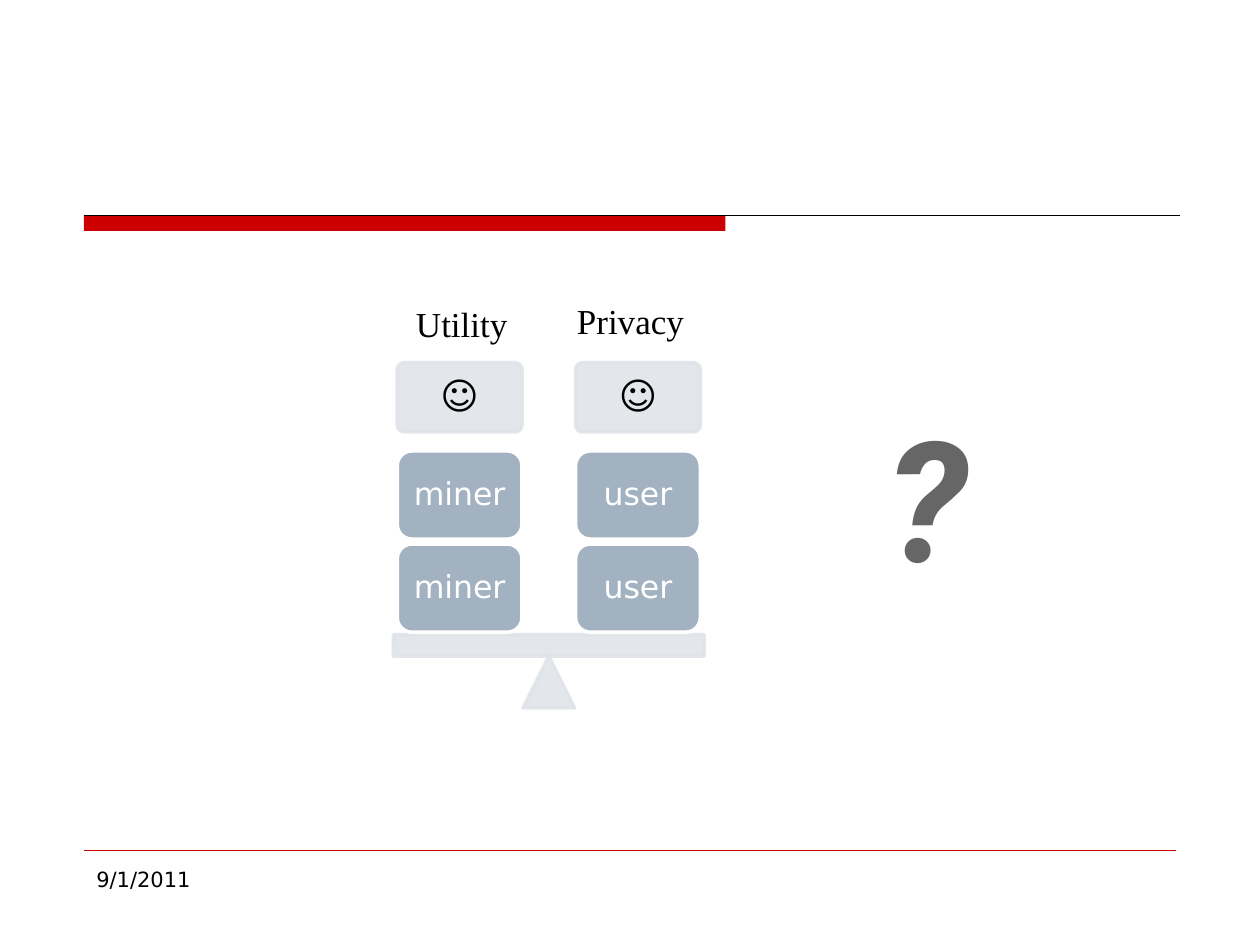
from lxml import etree
from pptx import Presentation
from pptx.dml.color import RGBColor
from pptx.enum.shapes import MSO_CONNECTOR, MSO_SHAPE
from pptx.enum.text import MSO_ANCHOR, PP_ALIGN
from pptx.oxml.ns import qn
from pptx.util import Pt

RECT, ROUNDED = MSO_SHAPE.RECTANGLE, MSO_SHAPE.ROUNDED_RECTANGLE
TRIANGLE = MSO_SHAPE.ISOSCELES_TRIANGLE
STRAIGHT = MSO_CONNECTOR.STRAIGHT
TOP, MIDDLE = MSO_ANCHOR.TOP, MSO_ANCHOR.MIDDLE
LEFT, CENTER = PP_ALIGN.LEFT, PP_ALIGN.CENTER
RED, PALE, SLATE, WHITE, BLACK = "CC0000", "E0E4E9", "A3B2C1", "FFFFFF", "000000"
SANS, SERIF = "DejaVu Sans", "Times New Roman"


def color(hex_code):
    return RGBColor.from_string(hex_code)


def write(shape, words, size, font, ink, align=CENTER, anchor=TOP):
    frame = shape.text_frame
    frame.word_wrap = True
    frame.vertical_anchor = anchor
    paragraph = frame.paragraphs[0]
    paragraph.alignment = align
    run = paragraph.add_run()
    run.text = words
    run.font.size = Pt(size)
    run.font.name = font
    run.font.color.rgb = color(ink)
    return paragraph


def add_label(slide, box, words, size, font, ink, align=CENTER):
    label = slide.shapes.add_textbox(*map(Pt, box))
    return write(label, words, size, font, ink, align)


def add_block(slide, kind, box, fill, line=None, opacity=100):
    block = slide.shapes.add_shape(kind, *map(Pt, box))
    block.shadow.inherit = False
    block.fill.solid()
    block.fill.fore_color.rgb = color(fill)
    if line is None:
        block.line.fill.background()
    else:
        block.line.color.rgb = color(line)
        block.line.width = Pt(2)
    if opacity < 100:
        for tint in block._element.spPr.iter(qn("a:srgbClr")):
            etree.SubElement(tint, qn("a:alpha")).set("val", str(opacity * 1000))
    return block


def add_rule(slide, left, right, y, ink, width):
    rule = slide.shapes.add_connector(STRAIGHT, Pt(left), Pt(y), Pt(right), Pt(y))
    rule.line.color.rgb = color(ink)
    rule.line.width = Pt(width)
    etree.SubElement(rule._element.spPr, qn("a:effectLst"))


def add_title_rule(slide, left, top, width, height):
    add_block(slide, RECT, (left, top, 366.5, height), RED)
    add_rule(slide, left, left + width, top, BLACK, 0.75)


def add_footer(slide, left, top, width, height):
    add_rule(slide, left, left + width, top, RED, 0.25)
    add_label(slide, (left, top + 5.8, 156.2, height), "9/1/2011", 12, SANS, BLACK, LEFT)


def add_card(slide, box, words, size, ink, fill, line, opacity, inset):
    card = add_block(slide, ROUNDED, box, fill, line, opacity)
    if opacity < 100:
        card.adjustments[0] = 0.1
    frame = card.text_frame
    frame.margin_left = frame.margin_right = Pt(inset)
    frame.margin_top = frame.margin_bottom = Pt(inset)
    write(card, words, size, SANS, ink, anchor=MIDDLE).line_spacing = 0.9


def add_stack(slide, left, top, width, role):
    add_card(slide, (left, top, width, 39.6), "☺", 21, BLACK, PALE, PALE, 90, 6.5)
    for level in (1, 0):
        box = (left, top + 50.5 + level * 53.2, width, 50.4)
        add_card(slide, box, role, 18, WHITE, SLATE, WHITE, 100, 5)


def add_scale(slide, left, top, width, height):
    beam_top, foot = top + 155.5, 29.5
    pivot_top = beam_top + 12.3
    pivot_left = left + (width - foot) / 2
    add_block(slide, TRIANGLE, (pivot_left, pivot_top, foot, top + height - pivot_top),
              PALE, PALE, 90)
    add_block(slide, RECT, (left, beam_top, width, 12.3), PALE, PALE, 90)
    stack_width, edge = 71.3, 2.2
    for stack_left, role in ((left + edge, "miner"),
                             (left + width - edge - stack_width, "user")):
        add_stack(slide, stack_left, top, stack_width, role)


def add_question(slide, box):
    mark = add_label(slide, box, "?", 96, "Roboto", "666666").runs[0]
    mark.font.bold = mark.font.italic = True


def main():
    deck = Presentation()
    deck.slide_width, deck.slide_height = Pt(720), Pt(540)
    slide = deck.slides.add_slide(deck.slide_layouts[6])
    add_title_rule(slide, 48, 123, 626.5, 9)
    add_scale(slide, 224.8, 207.2, 177.6, 197.4)
    add_label(slide, (203.8, 169.2, 120.2, 31.7), "Utility", 20, SERIF, BLACK)
    add_label(slide, (300.2, 167.8, 120.2, 31.7), "Privacy", 20, SERIF, BLACK)
    add_question(slide, (458, 221.8, 144, 123.8))
    add_footer(slide, 48, 486, 624, 37.4)
    deck.save("out.pptx")


if __name__ == "__main__":
    main()
